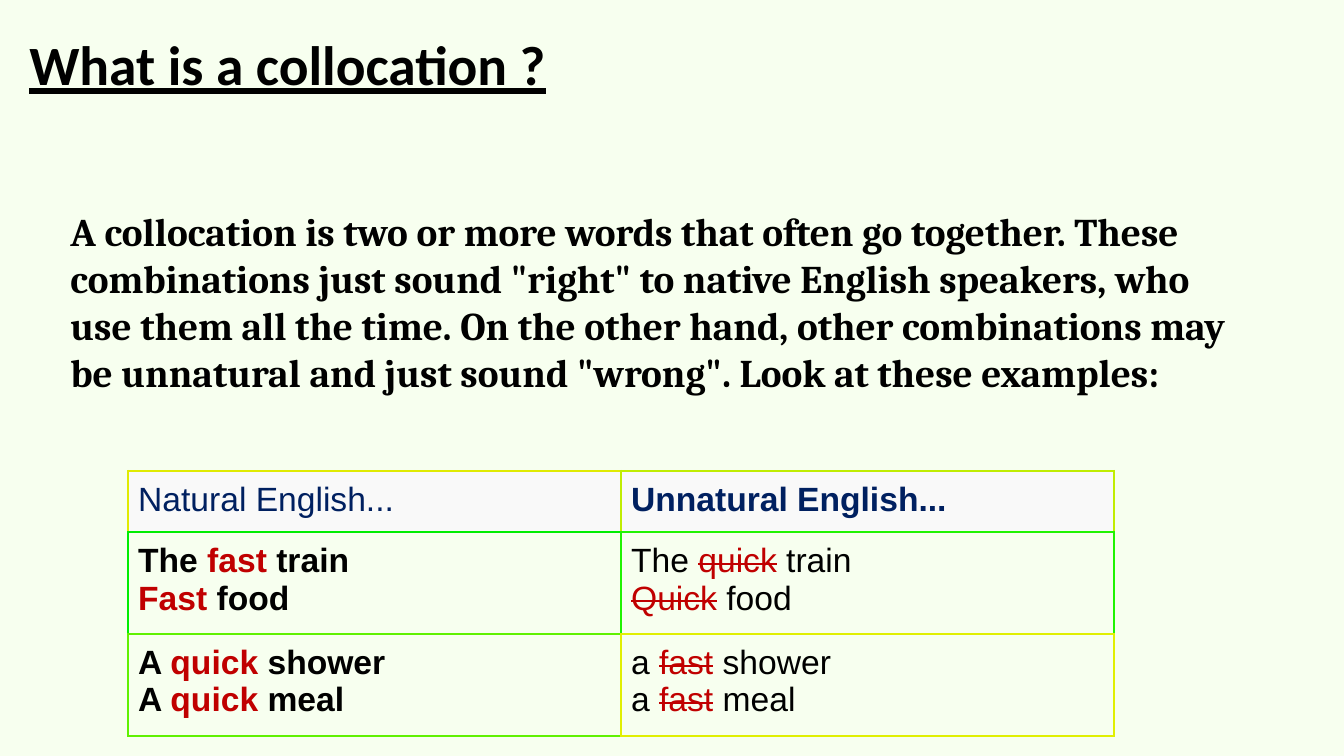
from lxml import etree
from pptx import Presentation
from pptx import util as u
from pptx.dml import color
from pptx.enum import text
from pptx.oxml import ns

COLORS = {
    "page": "F7FFEF", "header": "F9F9F9", "black": "000000",
    "navy": "002060", "red": "C00000", "yellow": "E0EB02",
    "lime": "C0ED02", "green": "00ED02", "bright": "20F302",
    "leaf": "60F102", "gold": "E0EF02",
}
TITLE = "What is a collocation ?"
DEFINITION = (
    'A collocation is two or more words that often go together. These '
    'combinations just sound "right" to native English speakers, who use '
    'them all the time. On the other hand, other combinations may be '
    'unnatural and just sound "wrong". Look at these examples:'
)
HEADERS = ["Natural English...", "Unnatural English..."]
EXAMPLES = [
    [[("The ", "fast", " train"), ("", "Fast", " food")],
     [("The ", "quick", " train"), ("", "Quick", " food")]],
    [[("A ", "quick", " shower"), ("A ", "quick", " meal")],
     [("a ", "fast", " shower"), ("a ", "fast", " meal")]],
]
SIDES = ["L", "R", "T", "B"]
BORDERS = [
    [["yellow", "lime", "yellow", "green"], ["lime", "lime", "lime", "bright"]],
    [["green", "bright", "green", "leaf"], ["bright", "bright", "bright", "gold"]],
    [["leaf", "gold", "leaf", "leaf"], ["gold"] * 4],
]
COLUMN_WIDTH = 4.89
ROW_HEIGHTS = [0.61, 1.01, 1.01]
TITLE_FONT = {"name": "Calibri", "size": u.Pt(39.6), "bold": True, "underline": True}
BODY_FONT = {"name": "Cambria", "size": u.Pt(28), "bold": True}
CELL_FONT = {"name": "Arial", "size": u.Pt(24)}


def rgb(name):
    return color.RGBColor.from_string(COLORS[name])


def add_span(para, words, ink, font, struck=False):
    span = para.add_run()
    span.text = words
    for key, value in font.items():
        setattr(span.font, key, value)
    span.font.color.rgb = rgb(ink)
    if struck:
        span.font._element.set("strike", "sngStrike")


def set_borders(cell, inks):
    properties = cell._tc.get_or_add_tcPr()
    for index, (side, ink) in enumerate(zip(SIDES, inks)):
        line = etree.Element(ns.qn(f"a:ln{side}"), w=str(u.Pt(1.5)))
        fill = etree.SubElement(line, ns.qn("a:solidFill"))
        etree.SubElement(fill, ns.qn("a:srgbClr"), val=COLORS[ink])
        properties.insert(index, line)


def add_title(page):
    title = page.shapes.title
    place = {"left": 0.19, "top": 0.3, "width": 12.74, "height": 1.26}
    for key, value in place.items():
        setattr(title, key, u.Inches(value))
    title.text_frame.vertical_anchor = text.MSO_ANCHOR.TOP
    title.text_frame.margin_top = 0
    para = title.text_frame.paragraphs[0]
    para.alignment = text.PP_ALIGN.LEFT
    add_span(para, TITLE, "black", TITLE_FONT)


def add_definition(page):
    box = page.shapes.add_textbox(*map(u.Inches, (0.6, 2.01, 11.92, 2.46)))
    box.text_frame.word_wrap = True
    add_span(box.text_frame.paragraphs[0], DEFINITION, "black", BODY_FONT)


def fill_header(cell, column):
    cell.fill.solid()
    cell.fill.fore_color.rgb = rgb("header")
    font = {**CELL_FONT, "bold": column == 1}
    add_span(cell.text_frame.paragraphs[0], HEADERS[column], "navy", font)


def fill_example(cell, lines, column):
    cell.fill.background()
    para = cell.text_frame.paragraphs[0]
    font = {**CELL_FONT, "bold": column == 0}
    for index, (before, marked, after) in enumerate(lines):
        if index:
            para.add_line_break()
        if before:
            add_span(para, before, "black", font)
        add_span(para, marked, "red", font, struck=column == 1)
        add_span(para, after, "black", font)


def add_examples(page):
    place = (1.27, 4.67, COLUMN_WIDTH * len(HEADERS), sum(ROW_HEIGHTS))
    frame = page.shapes.add_table(
        len(ROW_HEIGHTS), len(HEADERS), *map(u.Inches, place))
    table = frame.table
    table.first_row = table.horz_banding = False
    for column in table.columns:
        column.width = u.Inches(COLUMN_WIDTH)
    for row, height in enumerate(ROW_HEIGHTS):
        table.rows[row].height = u.Inches(height)
        for column in range(len(HEADERS)):
            cell = table.cell(row, column)
            for side in ("left", "right", "top", "bottom"):
                setattr(cell, f"margin_{side}", u.Inches(0.1))
            if row == 0:
                fill_header(cell, column)
            else:
                fill_example(cell, EXAMPLES[row - 1][column], column)
            set_borders(cell, BORDERS[row][column])


def main():
    deck = Presentation()
    deck.slide_width, deck.slide_height = u.Inches(13.33), u.Inches(7.5)
    page = deck.slides.add_slide(deck.slide_layouts.get_by_name("Title Only"))
    page.background.fill.solid()
    page.background.fill.fore_color.rgb = rgb("page")
    add_title(page)
    add_definition(page)
    add_examples(page)
    deck.save("out.pptx")


if __name__ == "__main__":
    main()
